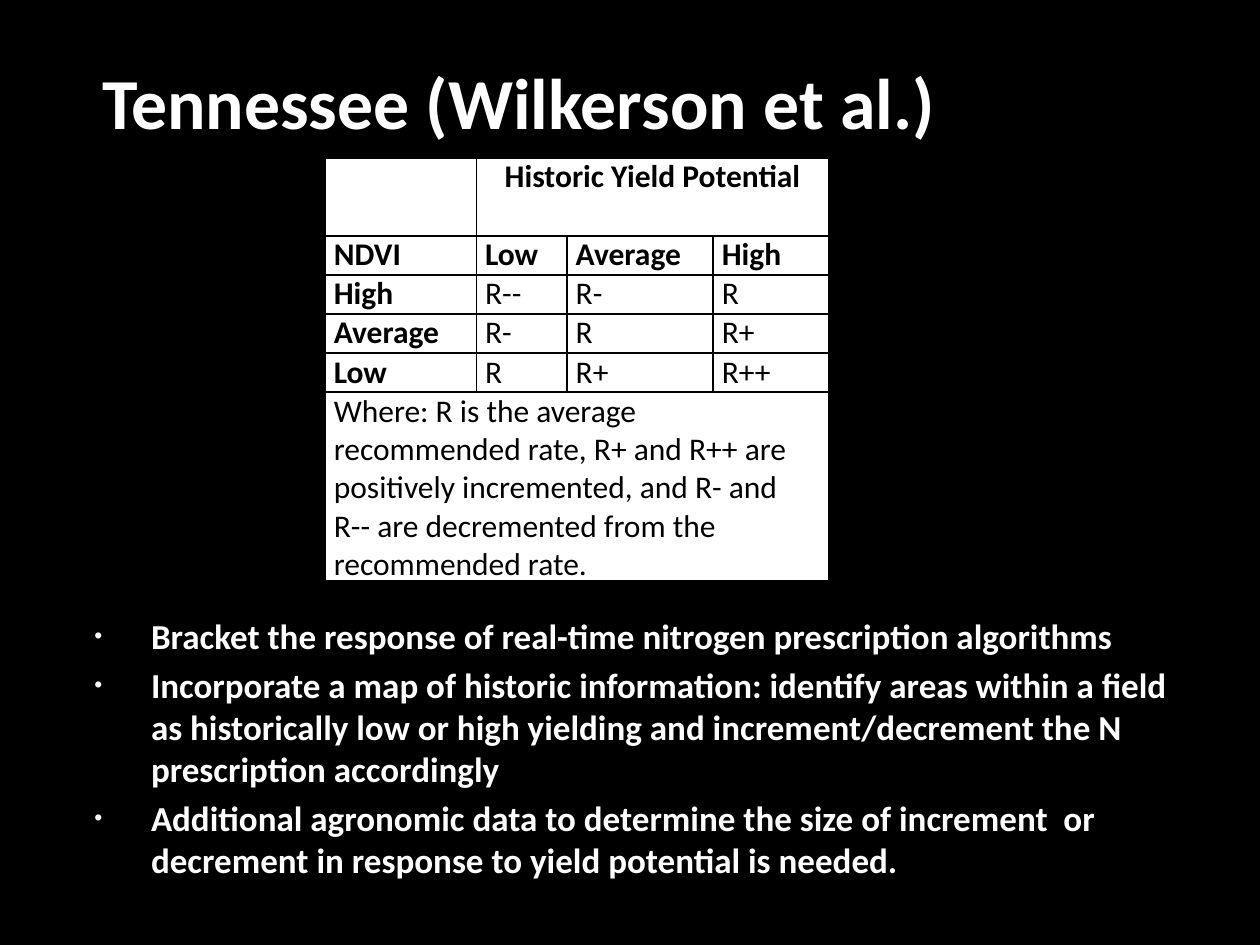
from dataclasses import dataclass

from lxml import etree
from pptx import Presentation
from pptx.dml.color import RGBColor
from pptx.enum.text import MSO_ANCHOR, PP_ALIGN
from pptx.oxml.ns import qn
from pptx.util import Emu, Inches, Pt

LEFT, CENTER = PP_ALIGN.LEFT, PP_ALIGN.CENTER
TOP, MIDDLE = MSO_ANCHOR.TOP, MSO_ANCHOR.MIDDLE
FONT = "Calibri"
BLACK, WHITE, BULLET = "000000", "FFFFFF", "F9F9F9"
SLIDE_W, SLIDE_H = Inches(10), Inches(7.5)
TABLE_W, LINE_H = 0.4 * SLIDE_W, Inches(0.31)
COL_SHARES = (0.3, 0.18, 0.29, 0.23)
ROW_LINES = (2, 1, 1, 1, 1, 3.36)


@dataclass
class Box:
    x: float
    y: float
    w: float
    h: float

    def emu(self) -> tuple:
        return (Emu(int(self.x * SLIDE_W)), Emu(int(self.y * SLIDE_H)),
                Emu(int(self.w * SLIDE_W)), Emu(int(self.h * SLIDE_H)))


@dataclass
class Cell:
    row: int
    col: int
    text: str
    bold: bool = False
    align: PP_ALIGN = LEFT
    span: int = 1


GRID = [
    ("NDVI", "Low", "Average", "High"),
    ("High", "R--", "R-", "R"),
    ("Average", "R-", "R", "R+"),
    ("Low", "R", "R+", "R++"),
]
CELLS = [
    Cell(0, 1, "Historic Yield Potential", True, CENTER, 3),
    *(Cell(i, j, text, i == 1 or j == 0)
      for i, row in enumerate(GRID, 1) for j, text in enumerate(row)),
    Cell(5, 0, "Where: R is the average recommended rate, R+ and R++ are "
         "positively incremented, and R- and R-- are decremented from the "
         "recommended rate.", span=4),
]
POINTS = [
    "Bracket the response of real-time nitrogen prescription algorithms",
    "Incorporate a map of historic information: identify areas within a field "
    "as historically low or high yielding and increment/decrement the N "
    "prescription accordingly",
    "Additional agronomic data to determine the size of increment  or "
    "decrement in response to yield potential is needed.",
]


def rgb(color: str) -> RGBColor:
    return RGBColor.from_string(color)


def write(p, text: str, size: float = 18, color: str = WHITE,
          bold: bool = True, align: PP_ALIGN = LEFT) -> None:
    p.alignment = align
    r = p.add_run()
    r.text = text
    r.font.name, r.font.size, r.font.bold = FONT, Pt(size), bold
    r.font.color.rgb = rgb(color)


def add_box(s, box: Box, anchor: MSO_ANCHOR):
    tf = s.shapes.add_textbox(*box.emu()).text_frame
    tf.word_wrap = True
    tf.vertical_anchor = anchor
    return tf


def add_bullet(p) -> None:
    p.space_before = Pt(4)
    pPr = p._p.get_or_add_pPr()
    pPr.set("marL", str(Inches(0.6)))
    pPr.set("indent", str(Inches(-0.45)))
    color = etree.SubElement(pPr, qn("a:buClr"))
    etree.SubElement(color, qn("a:srgbClr"), val=BULLET)
    etree.SubElement(pPr, qn("a:buSzPct"), val="65000")
    etree.SubElement(pPr, qn("a:buFont"), typeface="Arial")
    etree.SubElement(pPr, qn("a:buChar"), char="•")


def style_cell(cell) -> None:
    cell.margin_left = cell.margin_right = Inches(0.07)
    cell.margin_top = cell.margin_bottom = 0
    tcPr = cell._tc.get_or_add_tcPr()
    for side in ("a:lnL", "a:lnR", "a:lnT", "a:lnB"):
        ln = etree.SubElement(tcPr, qn(side), w=str(Pt(1)))
        fill = etree.SubElement(ln, qn("a:solidFill"))
        etree.SubElement(fill, qn("a:srgbClr"), val=BLACK)
    cell.fill.solid()
    cell.fill.fore_color.rgb = rgb(WHITE)


def add_yield_table(s, x: float, y: float) -> None:
    box = Box(x, y, TABLE_W / SLIDE_W, sum(ROW_LINES) * LINE_H / SLIDE_H)
    table = s.shapes.add_table(len(ROW_LINES), len(COL_SHARES), *box.emu()).table
    table.first_row = table.horz_banding = False
    for column, share in zip(table.columns, COL_SHARES):
        column.width = Emu(int(share * TABLE_W))
    for row, lines in zip(table.rows, ROW_LINES):
        row.height = Emu(int(lines * LINE_H))
    for cell in table.iter_cells():
        style_cell(cell)
    for c in CELLS:
        cell = table.cell(c.row, c.col)
        if c.span > 1:
            cell.merge(table.cell(c.row, c.col + c.span - 1))
        write(cell.text_frame.paragraphs[0], c.text, color=BLACK,
              bold=c.bold, align=c.align)


def main() -> None:
    prs = Presentation()
    prs.slide_width, prs.slide_height = SLIDE_W, SLIDE_H
    s = prs.slides.add_slide(prs.slide_layouts[6])
    s.background.fill.solid()
    s.background.fill.fore_color.rgb = rgb(BLACK)

    title = add_box(s, Box(0.033, 0.023, 0.758, 0.167), MIDDLE)
    write(title.paragraphs[0], "Tennessee (Wilkerson et al.)", size=41, align=CENTER)

    add_yield_table(s, 0.258, 0.167)

    body = add_box(s, Box(0.05, 0.644, 0.908, 0.197), TOP)
    for i, text in enumerate(POINTS):
        p = body.add_paragraph() if i else body.paragraphs[0]
        add_bullet(p)
        write(p, text, size=20)

    prs.save("out.pptx")


if __name__ == "__main__":
    main()
